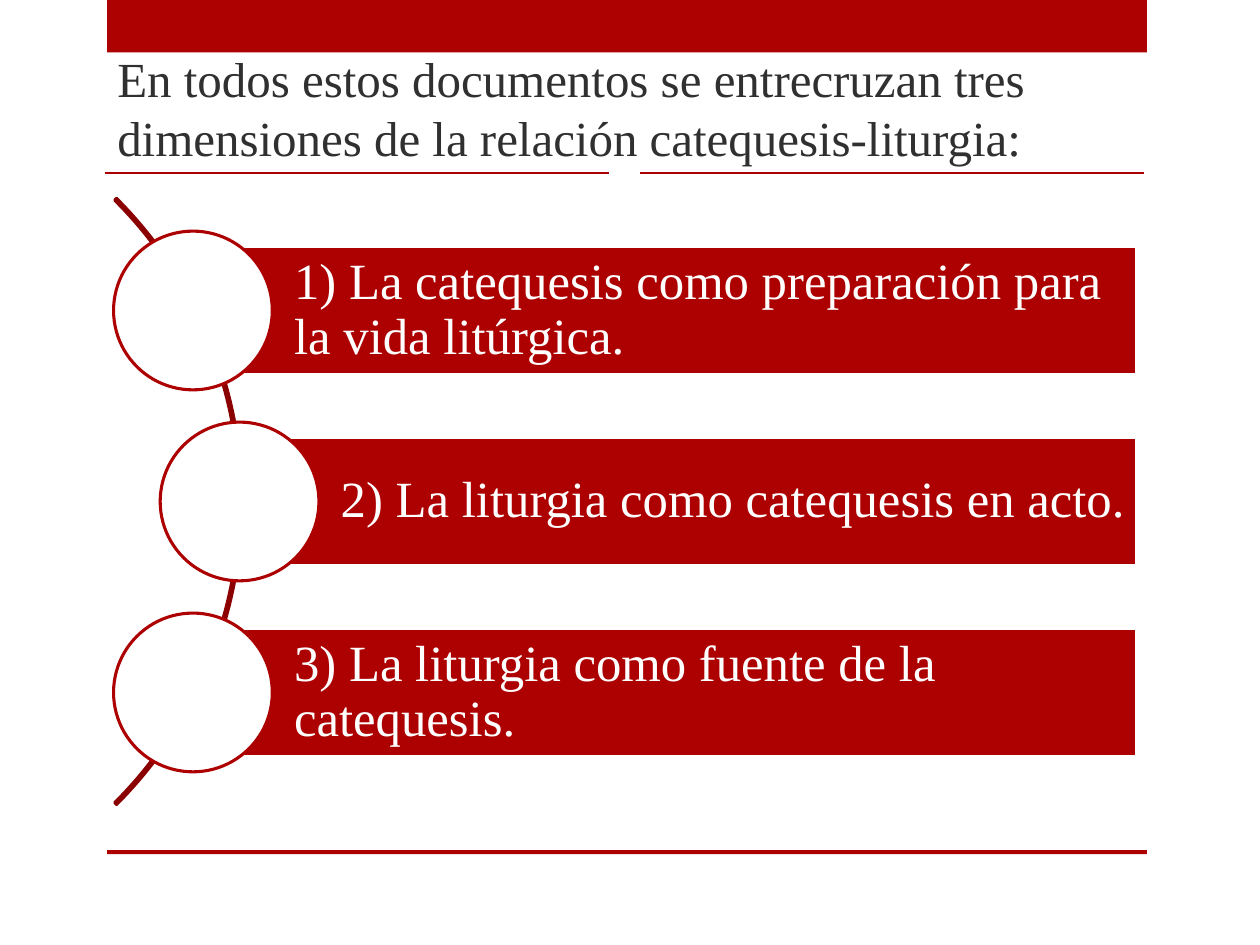
from pptx import Presentation
from pptx import util as u
from pptx.dml.color import RGBColor
from pptx.enum import shapes, text
from pptx.oxml.ns import qn
from lxml import etree

RED = RGBColor(0xAD, 0x01, 0x01)
DARK_RED = RGBColor(0x8B, 0x01, 0x01)
WHITE = RGBColor(0xFF, 0xFF, 0xFF)
CHARCOAL = RGBColor(0x30, 0x30, 0x30)

TITLE = "En todos estos documentos se entrecruzan tres dimensiones de la relación catequesis-liturgia:"
DIMENSIONS = [
    (3.89, "1) La catequesis como preparación para la vida litúrgica."),
    (4.83, "2) La liturgia como catequesis en acto."),
    (3.89, "3) La liturgia como fuente de la catequesis."),
]
MIDDLE_Y = 10.11
PITCH = 3.85
BAR_RIGHT = 22.92
BAR_HEIGHT = 2.57
CIRCLE_SIZE = 3.2
ARC_SIZE = 17.28
ARC_CENTER_X = -3.76


class SlideBuilder:
    """Holds the slide and its style; all positions are in centimetres."""

    font_name = "Times New Roman"
    line_width = u.Pt(1.75)

    def __init__(self, slide):
        self.slide = slide

    def set_text(self, shape, words, size, color, frame_format, para_format):
        frame = shape.text_frame
        frame.text = words
        para = frame.paragraphs[0]
        font_format = {"name": self.font_name, "size": u.Pt(size)}
        for target, values in ((frame, frame_format), (para, para_format),
                               (para.font, font_format)):
            for name, value in values.items():
                setattr(target, name, value)
        para.font.color.rgb = color

    def title(self, words, left, top, width, height):
        box = self.slide.shapes.title
        place = {"left": left, "top": top, "width": width, "height": height}
        for name, value in place.items():
            setattr(box, name, u.Cm(value))
        self.set_text(box, words, 28, CHARCOAL,
                      {"word_wrap": True, "auto_size": text.MSO_AUTO_SIZE.NONE,
                       "vertical_anchor": text.MSO_ANCHOR.BOTTOM},
                      {"alignment": text.PP_ALIGN.LEFT})

    def shape(self, kind, left, top, width, height, fill, line=None):
        shape = self.slide.shapes.add_shape(
            kind, *(u.Cm(value) for value in (left, top, width, height)))
        shape.shadow.inherit = False
        shape.fill.solid()
        shape.fill.fore_color.rgb = fill
        if line is None:
            shape.line.fill.background()
        else:
            shape.line.color.rgb = line
            shape.line.width = self.line_width
        return shape

    def rule(self, left, right, y):
        line = self.slide.shapes.add_connector(
            shapes.MSO_CONNECTOR.STRAIGHT, u.Cm(left), u.Cm(y), u.Cm(right), u.Cm(y))
        line.line.color.rgb = RED
        line.line.width = u.Pt(1.25)
        etree.SubElement(line._element.spPr, qn("a:effectLst"))

    def arc(self, center_x, center_y, size):
        """Thin quarter ring that opens to the left."""
        arc = self.shape(shapes.MSO_SHAPE.BLOCK_ARC, center_x - size / 2,
                         center_y - size / 2, size, size, DARK_RED, DARK_RED)
        for index, value in enumerate((189, 27, 0.003)):
            arc.adjustments[index] = value

    def bar(self, words, left, center_y):
        bar = self.shape(shapes.MSO_SHAPE.RECTANGLE, left, center_y - BAR_HEIGHT / 2,
                         BAR_RIGHT - left, BAR_HEIGHT, RED, WHITE)
        inset = u.Cm(0.2)
        self.set_text(bar, words, 29, WHITE,
                      {"word_wrap": True, "vertical_anchor": text.MSO_ANCHOR.MIDDLE,
                       "margin_left": u.Cm(2.04), "margin_top": inset,
                       "margin_right": inset, "margin_bottom": inset},
                      {"alignment": text.PP_ALIGN.LEFT, "line_spacing": 0.9})

    def circle(self, center_x, center_y):
        self.shape(shapes.MSO_SHAPE.OVAL, center_x - CIRCLE_SIZE / 2,
                   center_y - CIRCLE_SIZE / 2, CIRCLE_SIZE, CIRCLE_SIZE, WHITE, RED)


def main():
    deck = Presentation()
    deck.slide_width, deck.slide_height = u.Cm(25.4), u.Cm(19.05)
    page = SlideBuilder(deck.slides.add_slide(deck.slide_layouts[5]))

    for top, height in ((0, 1.06), (17.14, 0.08)):
        page.shape(shapes.MSO_SHAPE.RECTANGLE, 2.16, top, 20.96, height, RED)
    for left in (2.11, 12.9):
        page.rule(left, left + 10.16, 3.48)
    page.title(TITLE, 2.11, 1.7, 20.8, 1.78)

    page.arc(ARC_CENTER_X, MIDDLE_Y, ARC_SIZE)
    for row, (left, words) in enumerate(DIMENSIONS):
        center_y = MIDDLE_Y + (row - 1) * PITCH
        page.bar(words, left, center_y)
        page.circle(left, center_y)

    deck.save("out.pptx")


if __name__ == "__main__":
    main()
